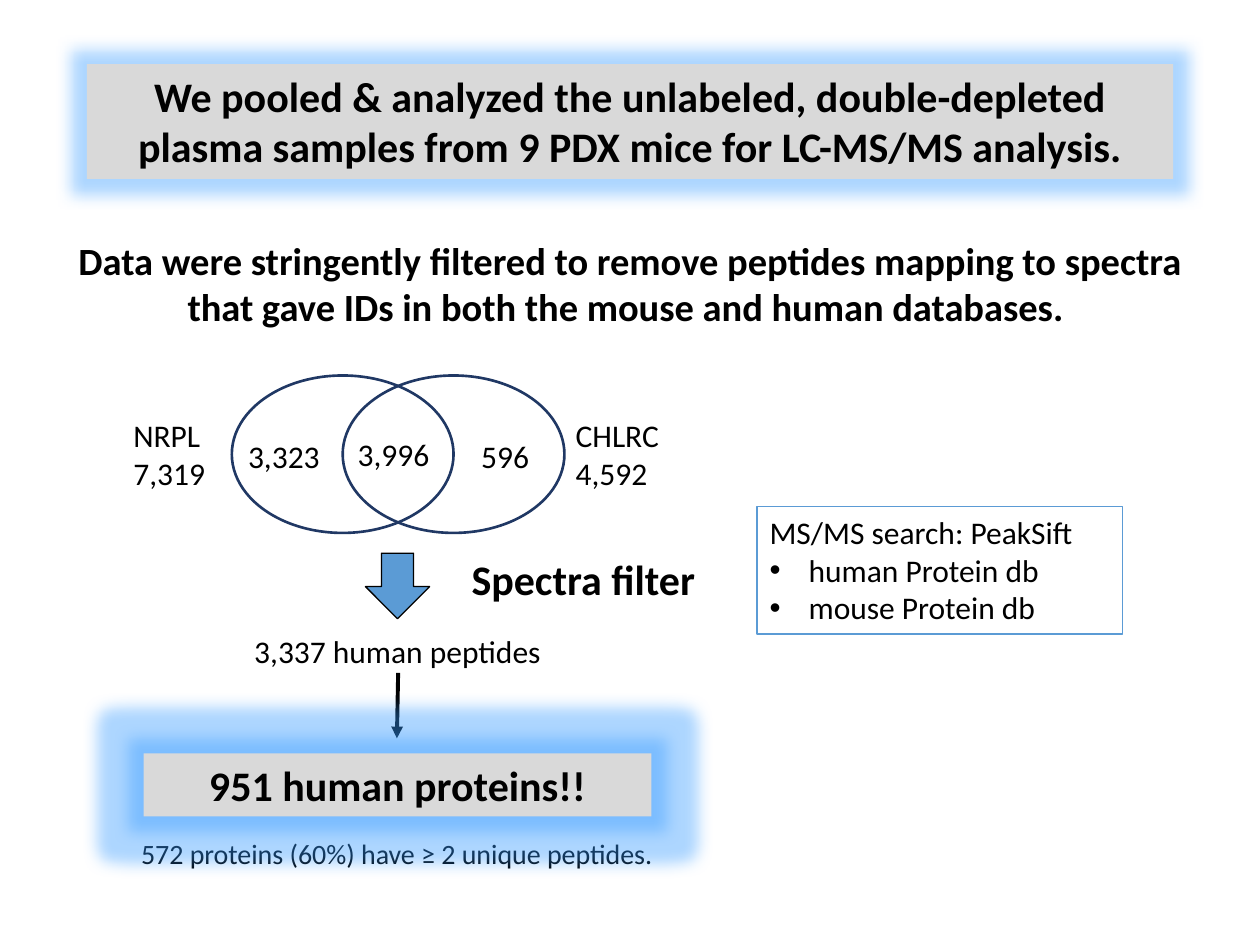
from pptx import Presentation
from pptx.dml.color import RGBColor
from pptx.enum.shapes import MSO_CONNECTOR as CONNECTOR, MSO_SHAPE as SHAPE
from pptx.enum.text import MSO_ANCHOR as ANCHOR, PP_ALIGN as ALIGN
from pptx.oxml import parse_xml
from pptx.oxml.ns import nsdecls
from pptx.util import Inches, Pt


class Theme:
    font = "Calibri"
    black = RGBColor.from_string("000000")
    white = RGBColor.from_string("FFFFFF")
    navy = RGBColor.from_string("203864")
    blue = RGBColor.from_string("5B9BD5")
    grey = RGBColor.from_string("D9D9D9")
    glow = "3399FF"
    small, body, lead, large = Pt(16), Pt(18), Pt(22), Pt(24)


def write(box, lines, size, bold=False, align=ALIGN.LEFT, wrap=True):
    frame = box.text_frame
    frame.text = "\n".join(lines)
    frame.word_wrap = wrap
    frame.vertical_anchor = ANCHOR.TOP
    frame.margin_left = frame.margin_right = Inches(0.1)
    frame.margin_top = frame.margin_bottom = Inches(0.05)
    for para in frame.paragraphs:
        para.alignment = align
        para.line_spacing = 1.0
        para.space_before = Pt(0)
        for span in para.runs:
            span.font.name = Theme.font
            span.font.size = size
            span.font.bold = bold
            span.font.color.rgb = Theme.black


def add_glow(box):
    box.fill.solid()
    box.fill.fore_color.rgb = Theme.grey
    box.line.fill.background()
    box.shadow.inherit = False
    effects = box._element.spPr.find("{*}effectLst")
    effects.append(parse_xml(
        f'<a:glow {nsdecls("a")} rad="{Inches(0.25)}"><a:srgbClr val="{Theme.glow}">'
        '<a:alpha val="40000"/></a:srgbClr></a:glow>'))


deck = Presentation()
deck.slide_width, deck.slide_height = Inches(10), Inches(7.5)
page = deck.slides.add_slide(deck.slide_layouts[5])
shapes = page.shapes

# Venn diagram
for left in (1.84, 2.72):
    oval = shapes.add_shape(SHAPE.OVAL, Inches(left), Inches(2.98), Inches(1.76), Inches(1.25))
    oval.shadow.inherit = False
    oval.fill.background()
    oval.line.color.rgb = Theme.navy
    oval.line.width = Pt(1.5)

# Venn labels: left, top, width, height, lines
labels = [
    (0.96, 3.25, 0.78, 0.71, ["NRPL", "7,319"]),
    (4.47, 3.25, 0.88, 0.71, ["CHLRC", "4,592"]),
    (2.74, 3.4, 0.78, 0.4, ["3,996"]),
    (1.87, 3.42, 0.78, 0.4, ["3,323"]),
    (3.72, 3.42, 0.59, 0.4, ["596"]),
]
for *place, lines in labels:
    box = shapes.add_textbox(*map(Inches, place))
    write(box, lines, Theme.body, wrap=False)

# Centred captions: left, top, width, height, lines, size, bold, wrap
captions = [
    (0, 1.83, 10, 0.84,
     ["Data were stringently filtered to remove peptides mapping to spectra",
      "that gave IDs in both the mouse and human databases. "], Theme.lead, True, True),
    (1.9, 4.97, 2.51, 0.4, ["3,337 human peptides"], Theme.body, False, False),
    (3.63, 4.34, 2, 0.5, ["Spectra filter"], Theme.large, True, False),
    (0.61, 6.59, 5.08, 0.37,
     ["572 proteins (60%) have ≥ 2 unique peptides."], Theme.small, False, True),
]
for *place, lines, size, bold, wrap in captions:
    box = shapes.add_textbox(*map(Inches, place))
    write(box, lines, size, bold, ALIGN.CENTER, wrap)

# Filter arrow
block_arrow = shapes.add_shape(
    SHAPE.DOWN_ARROW, Inches(2.9), Inches(4.39), Inches(0.51), Inches(0.52))
block_arrow.shadow.inherit = False
block_arrow.fill.solid()
block_arrow.fill.fore_color.rgb = Theme.blue
block_arrow.line.color.rgb = Theme.black
block_arrow.line.width = Pt(0.75)

# Arrow from peptides to proteins
arrow = shapes.add_connector(
    CONNECTOR.STRAIGHT, Inches(3.16), Inches(5.34), Inches(3.15), Inches(5.86))
arrow.line.color.rgb = Theme.black
arrow.line.width = Pt(2.25)
arrow.line._get_or_add_ln().append(parse_xml(f'<a:tailEnd {nsdecls("a")} type="triangle"/>'))
arrow._element.spPr.append(parse_xml(f'<a:effectLst {nsdecls("a")}/>'))

# Search settings
search = shapes.add_shape(
    SHAPE.RECTANGLE, Inches(6.01), Inches(4.02), Inches(2.9), Inches(1.01))
search.shadow.inherit = False
search.fill.solid()
search.fill.fore_color.rgb = Theme.white
search.line.color.rgb = Theme.blue
search.line.width = Pt(1)
write(search, ["MS/MS search: PeakSift", "human Protein db", "mouse Protein db"],
      Theme.body, wrap=False)
for para in search.text_frame.paragraphs[1:]:
    props = para._p.get_or_add_pPr()
    props.set("marL", str(Inches(0.31)))
    props.set("indent", str(-Inches(0.31)))
    props.append(parse_xml(f'<a:buFont {nsdecls("a")} typeface="Arial"/>'))
    props.append(parse_xml(f'<a:buChar {nsdecls("a")} char="•"/>'))

# Result
result = shapes.add_shape(
    SHAPE.RECTANGLE, Inches(1.14), Inches(5.98), Inches(4.03), Inches(0.5))
write(result, ["951 human proteins!!"], Theme.large, True, ALIGN.CENTER)
add_glow(result)

# Title
title = shapes.title
title.left, title.top = Inches(0.69), Inches(0.51)
title.width, title.height = Inches(8.62), Inches(0.91)
write(title, ["We pooled & analyzed the unlabeled, double-depleted "
              "plasma samples from 9 PDX mice for LC-MS/MS analysis."],
      Theme.large, True, ALIGN.CENTER)
add_glow(title)

deck.save("out.pptx")
